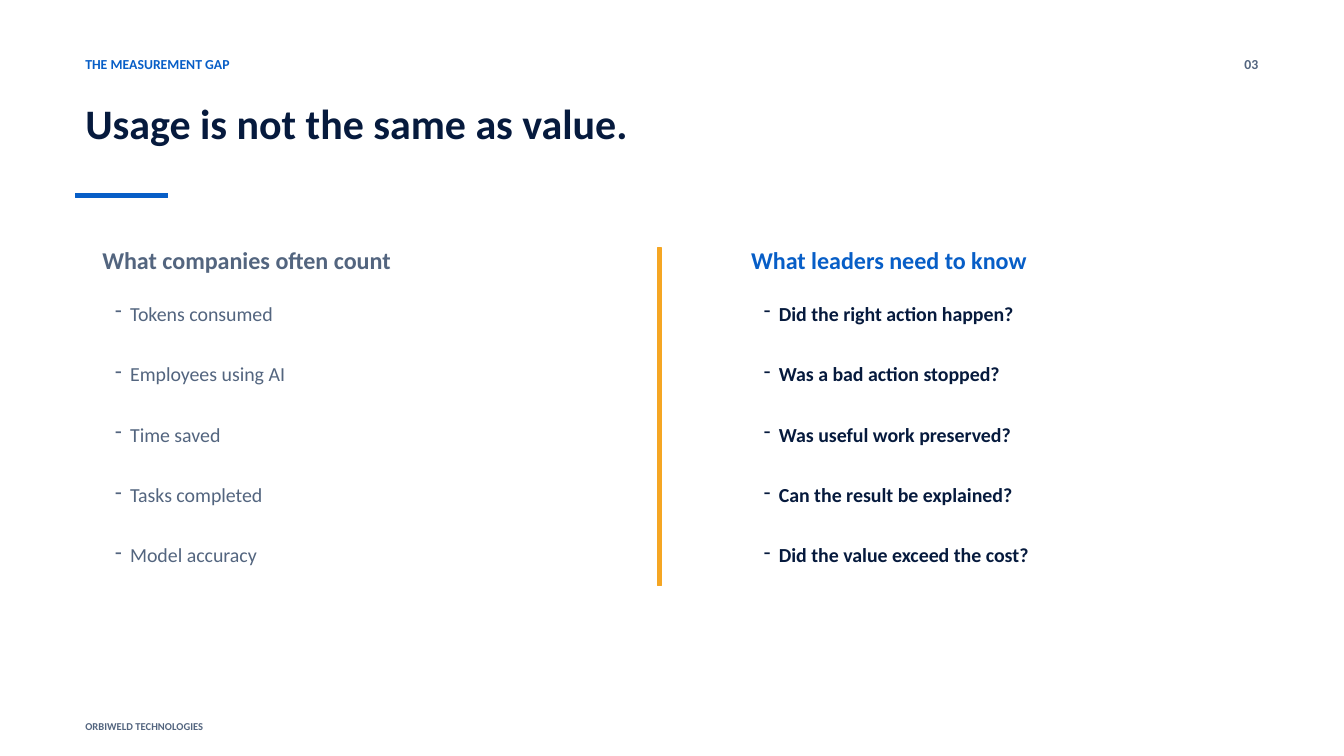
import pptx
import pptx.dml.color
import pptx.enum.shapes
import pptx.enum.text
import pptx.oxml.ns
import pptx.util
from lxml import etree

Cm = pptx.util.Cm
Pt = pptx.util.Pt
ALIGN = pptx.enum.text.PP_ALIGN

BLUE = "075EC7"
GREY = "53657F"
NAVY = "061A3D"
AMBER = "F5A623"

COUNTS = ["Tokens consumed", "Employees using AI", "Time saved",
          "Tasks completed", "Model accuracy"]
NEEDS = ["Did the right action happen?", "Was a bad action stopped?",
         "Was useful work preserved?", "Can the result be explained?",
         "Did the value exceed the cost?"]


def color(code):
    """Turn a hex string into a colour."""
    return pptx.dml.color.RGBColor.from_string(code)


def style(para, size, code, bold):
    """Set the font of a whole paragraph."""
    font = para.font
    font.name = "Calibri"
    font.size = Pt(size)
    font.bold = bold
    font.color.rgb = color(code)


def add_frame(slide, left, top, width, height):
    """Add a wrapping text box and return its frame."""
    box = slide.shapes.add_textbox(Cm(left), Cm(top), Cm(width), Cm(height))
    box.text_frame.word_wrap = True
    return box.text_frame


def add_label(slide, text, left, top, width, height, size, code,
              align=ALIGN.LEFT):
    """Add one bold line of text."""
    para = add_frame(slide, left, top, width, height).paragraphs[0]
    para.text = text
    para.alignment = align
    style(para, size, code, True)


def add_dash(para):
    """Give a paragraph a dash bullet with a hanging indent."""
    props = para._p.get_or_add_pPr()
    indent = Cm(0.38)
    props.set("marL", str(indent))
    props.set("indent", str(-indent))
    mark = etree.SubElement(props, pptx.oxml.ns.qn("a:buChar"))
    mark.set("char", "-")


def add_list(slide, items, left, width, code, bold):
    """Add a dashed list with even gaps."""
    frame = add_frame(slide, left, 7.47, width, 7)
    for index, item in enumerate(items):
        para = frame.add_paragraph() if index else frame.paragraphs[0]
        para.text = item
        add_dash(para)
        if index:
            para.space_before = Pt(26.1)
        style(para, 14.2, code, bold)


def add_bar(slide, left, top, width, height, code):
    """Add a plain filled bar."""
    bar = slide.shapes.add_shape(
        pptx.enum.shapes.MSO_SHAPE.RECTANGLE,
        Cm(left), Cm(top), Cm(width), Cm(height))
    bar.shadow.inherit = False
    bar.fill.solid()
    bar.fill.fore_color.rgb = color(code)
    bar.line.color.rgb = color(code)
    bar.line.width = Pt(0)


def main():
    """Build the slide and save it."""
    deck = pptx.Presentation()
    deck.slide_width = Cm(33.87)
    deck.slide_height = Cm(19.05)
    slide = deck.slides.add_slide(deck.slide_layouts[6])

    add_label(slide, "THE MEASUREMENT GAP", 1.9, 1.27, 20.1, 0.64, 9.8, BLUE)
    add_label(slide, "03", 30.69, 1.27, 1.27, 0.64, 9.8, GREY, ALIGN.RIGHT)
    add_label(slide, "Usage is not the same as value.",
              1.9, 2.33, 30.05, 2.44, 30, NAVY)
    add_bar(slide, 1.9, 4.87, 2.33, 0.11, BLUE)

    add_label(slide, "What companies often count",
              2.33, 6.05, 12.45, 0.85, 17.2, GREY)
    add_list(slide, COUNTS, 2.65, 11.64, GREY, False)
    add_bar(slide, 16.56, 6.25, 0.11, 8.5, AMBER)
    add_label(slide, "What leaders need to know",
              18.68, 6.05, 12.45, 0.85, 17.2, BLUE)
    add_list(slide, NEEDS, 19, 12.45, NAVY, True)

    add_label(slide, "ORBIWELD TECHNOLOGIES",
              1.9, 18.03, 11.11, 0.48, 7.5, GREY)
    deck.save("out.pptx")


if __name__ == "__main__":
    main()
